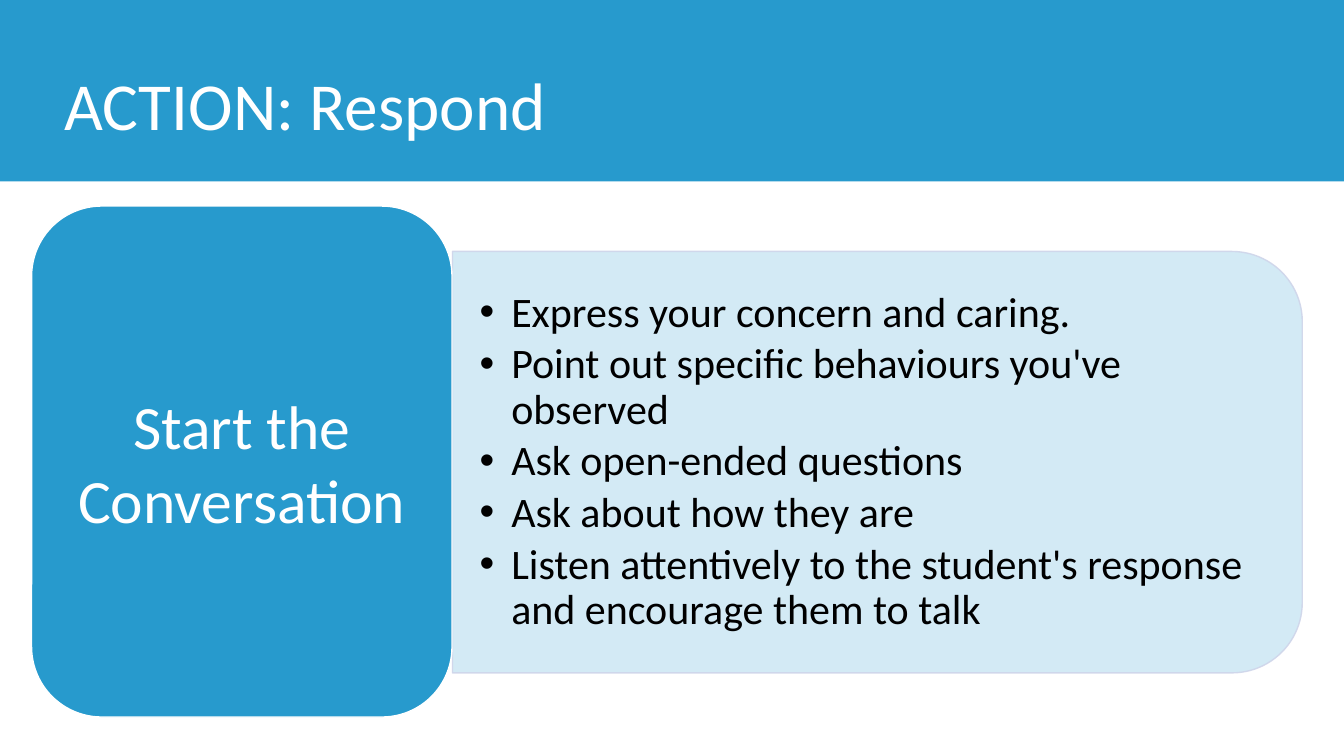
from lxml import etree
from pptx import Presentation
from pptx.dml.color import RGBColor
from pptx.enum.shapes import MSO_SHAPE
from pptx.enum.text import MSO_ANCHOR, PP_ALIGN
from pptx.oxml.ns import qn
from pptx.util import Pt

RECTANGLE = MSO_SHAPE.RECTANGLE
ROUNDED = MSO_SHAPE.ROUNDED_RECTANGLE
ROUND_TOP = MSO_SHAPE.ROUND_2_SAME_RECTANGLE
MIDDLE = MSO_ANCHOR.MIDDLE
LEFT, CENTER = PP_ALIGN.LEFT, PP_ALIGN.CENTER

BLUE, WHITE, BLACK, PALE = "279ACD", "FFFFFF", "000000", "CFD5EA"
TITLE_ONLY = 5

ADVICE = [
    "Express your concern and caring.",
    "Point out specific behaviours you've observed",
    "Ask open-ended questions",
    "Ask about how they are",
    "Listen attentively to the student's response and encourage them to talk",
]


def color(value):
    return RGBColor.from_string(value)


def set_alpha(parent, percent):
    """Make the solid fill inside an element partly transparent."""
    rgb = parent.find(qn("a:solidFill"))[0]
    etree.SubElement(rgb, qn("a:alpha"), val=str(percent * 1000))


class Page:
    font = "Calibri"

    def __init__(self, deck):
        self.slide = deck.slides.add_slide(deck.slide_layouts[TITLE_ONLY])
        self.shapes = self.slide.shapes

    def shape(self, kind, at, fill, line=None):
        box = self.shapes.add_shape(kind, *map(Pt, at))
        box.shadow.inherit = False
        box.fill.solid()
        box.fill.fore_color.rgb = color(fill)
        if line:
            box.line.width = Pt(1)
            box.line.color.rgb = color(line)
        else:
            box.line.fill.background()
        return box

    def text(self, box, lines, size, ink, insets, bullet_indent=None, **layout):
        """Fill a box with paragraphs; layout holds paragraph attributes."""
        frame = box.text_frame
        across, down = map(Pt, insets)
        settings = {"word_wrap": True, "vertical_anchor": MIDDLE,
                    "margin_left": across, "margin_right": across,
                    "margin_top": down, "margin_bottom": down}
        for name, value in settings.items():
            setattr(frame, name, value)
        frame.text = "\n".join(lines)
        for para in frame.paragraphs:
            for name, value in layout.items():
                setattr(para, name, value)
            if bullet_indent:
                self.bullet(para, bullet_indent)
            font = para.runs[0].font
            for name, value in {"name": self.font, "size": Pt(size)}.items():
                setattr(font, name, value)
            font.color.rgb = color(ink)

    def bullet(self, para, indent):
        properties = para._p.get_or_add_pPr()
        properties.set("marL", str(Pt(indent)))
        properties.set("indent", str(-Pt(indent)))
        etree.SubElement(properties, qn("a:buFont"), typeface="Arial")
        etree.SubElement(properties, qn("a:buChar"), char="•")

    def title(self, words, at):
        box = self.shapes.title
        box.left, box.top, box.width, box.height = map(Pt, at)
        self.text(box, [words], 48, WHITE, (7.2, 3.6),
                  alignment=LEFT, line_spacing=0.9)
        box.element.getparent().append(box.element)  # in front of the band

    def card(self, words, at):
        box = self.shape(ROUNDED, at, BLUE, line=WHITE)
        self.text(box, [words], 44, WHITE, (13.2, 6.6), alignment=CENTER)

    def panel(self, lines, at, text_at):
        """Draw a panel rounded on its right side, with a bulleted list on it."""
        left, top, width, height = at
        shift = (width - height) / 2
        box = self.shape(ROUND_TOP, (left + shift, top - shift, height, width),
                         BLUE, line=PALE)
        box.rotation = 90
        properties = box.element.spPr
        set_alpha(properties, 20)
        set_alpha(properties.find(qn("a:ln")), 90)
        words = self.shapes.add_textbox(*map(Pt, text_at))
        self.text(words, lines, 30, BLACK, (19.5, 9.75), bullet_indent=22.5,
                  alignment=LEFT, line_spacing=0.9, space_after=Pt(4.5))


def main():
    deck = Presentation()
    deck.slide_width, deck.slide_height = Pt(960), Pt(540)
    page = Page(deck)
    page.shape(RECTANGLE, (0, 0, 960, 129.6), BLUE)
    page.panel(ADVICE, at=(323.2, 179.6, 607, 301),
               text_at=(323.2, 194.4, 592.6, 271.4))
    page.card("Start the Conversation", at=(22.6, 147.2, 300.3, 365))
    page.title("ACTION: Respond", at=(38.9, 27.4, 849.6, 100.8))
    deck.save("out.pptx")


if __name__ == "__main__":
    main()
